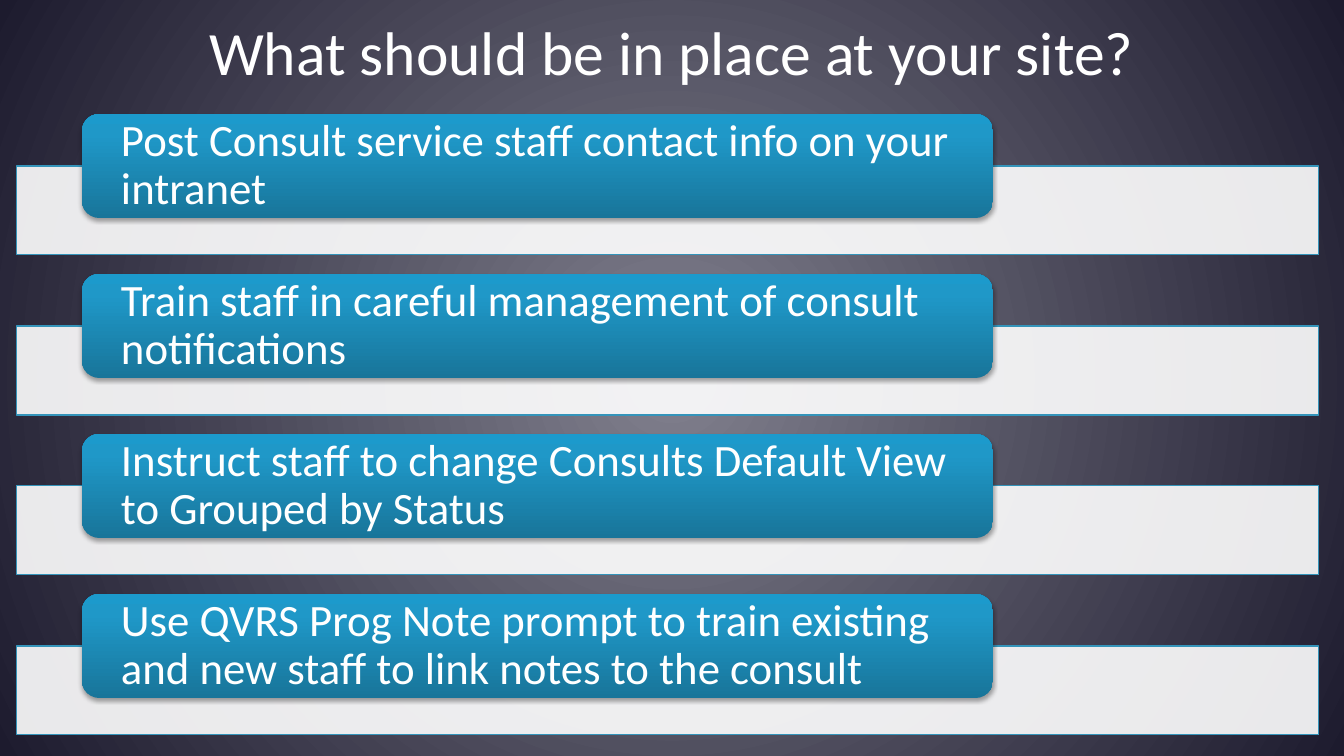
from lxml import etree
from pptx import Presentation
from pptx.dml.color import RGBColor
from pptx.enum.shapes import MSO_SHAPE
from pptx.enum.text import MSO_ANCHOR, PP_ALIGN
from pptx.oxml.ns import qn
from pptx.util import Emu, Pt

EMU_PER_PX = 914400 / 100.8
RECTANGLE = MSO_SHAPE.RECTANGLE
ROUNDED = MSO_SHAPE.ROUNDED_RECTANGLE
MIDDLE = MSO_ANCHOR.MIDDLE
LEFT = PP_ALIGN.LEFT
CENTER = PP_ALIGN.CENTER

FONT = "Calibri"
WHITE = "FFFFFF"
BAR_LINE = "3494BA"
PAGE_STOPS = [(0, "81808E"), (100, "1D1B2E")]
LABEL_STOPS = [(0, "18759A"), (80, "1F98C8"), (100, "1C9ACC")]

TITLE = "What should be in place at your site?"
STEPS = [
    "Post Consult service staff contact info on your intranet",
    "Train staff in careful management of consult notifications",
    "Instruct staff to change Consults Default View to Grouped by Status",
    "Use QVRS Prog Note prompt to train existing and new staff to link notes to the consult",
]
FIRST_TOP = 114
STEP_PITCH = 160
BAR_DROP = 52


def px(count):
    return Emu(round(count * EMU_PER_PX))


def color(value):
    return RGBColor.from_string(value)


def add_node(parent, tag, **attributes):
    node = etree.SubElement(parent, qn(tag))
    for name, value in attributes.items():
        node.set(name, str(value))
    return node


def add_color(parent, value, alpha=100):
    node = add_node(parent, "a:srgbClr", val=value)
    if alpha < 100:
        add_node(node, "a:alpha", val=alpha * 1000)


def set_gradient(fill, owner, stops, angle=None):
    fill.gradient()
    gradient = owner.find(".//" + qn("a:gradFill"))
    for child in list(gradient):
        gradient.remove(child)
    stop_list = add_node(gradient, "a:gsLst")
    for position, value in stops:
        add_color(add_node(stop_list, "a:gs", pos=position * 1000), value)
    if angle is None:
        route = add_node(gradient, "a:path")
        route.set("path", "circle")
        add_node(route, "a:fillToRect", l=50000, t=50000, r=50000, b=50000)
    else:
        add_node(gradient, "a:lin", ang=angle * 60000, scaled=0)


def set_shadow(box):
    box.shadow.inherit = False
    effects = box._element.spPr.find(qn("a:effectLst"))
    shadow = add_node(effects, "a:outerShdw", blurRad=Pt(3.1), dist=Pt(1.8),
                      dir=90 * 60000, rotWithShape=0)
    add_color(shadow, "000000", alpha=35)


def set_text(box, text, size, align=LEFT, inset=0, spacing=None):
    frame = box.text_frame
    frame.word_wrap = True
    frame.vertical_anchor = MIDDLE
    frame.margin_left = frame.margin_right = px(inset)
    frame.margin_top = frame.margin_bottom = 0
    para = frame.paragraphs[0]
    para.alignment = align
    para.line_spacing = spacing
    span = para.add_run()
    span.text = text
    span.font.name = FONT
    span.font.size = Pt(size)
    span.font.color.rgb = color(WHITE)


def add_title(page, text):
    title = page.shapes.title
    title.left, title.top = px(0), px(0)
    title.width, title.height = px(1344), px(101)
    set_text(title, text, 44, align=CENTER)


def add_bar(group, top):
    bar = group.shapes.add_shape(RECTANGLE, px(17), px(top), px(1302), px(89))
    bar.shadow.inherit = False
    bar.fill.solid()
    bar.fill.fore_color.rgb = color(WHITE)
    white = bar._element.spPr.find(qn("a:solidFill"))[0]
    add_node(white, "a:alpha", val=90000)
    bar.line.color.rgb = color(BAR_LINE)
    bar.line.width = Pt(0.75)


def add_label(group, top, text):
    label = group.shapes.add_shape(ROUNDED, px(82), px(top), px(911), px(104))
    set_gradient(label.fill, label._element, LABEL_STOPS, angle=270)
    label.line.fill.background()
    set_shadow(label)
    set_text(label, text, 32, inset=34, spacing=0.9)


def main():
    deck = Presentation()
    deck.slide_width, deck.slide_height = px(1344), px(756)
    page = deck.slides.add_slide(deck.slide_layouts.get_by_name("Title Only"))
    set_gradient(page.background.fill, page._element, PAGE_STOPS)
    add_title(page, TITLE)
    group = page.shapes.add_group_shape()
    for index, step in enumerate(STEPS):
        top = FIRST_TOP + index * STEP_PITCH
        add_bar(group, top + BAR_DROP)
        add_label(group, top, step)
    deck.save("out.pptx")


if __name__ == "__main__":
    main()
